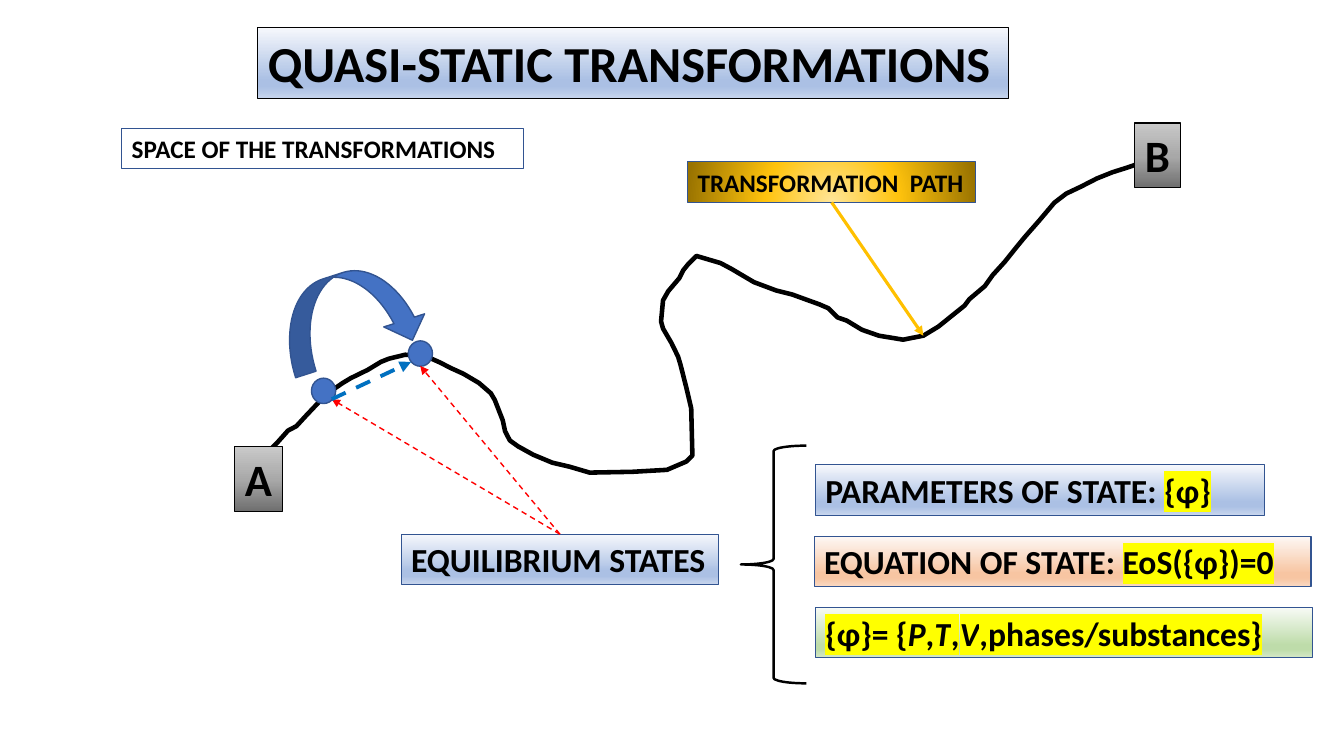
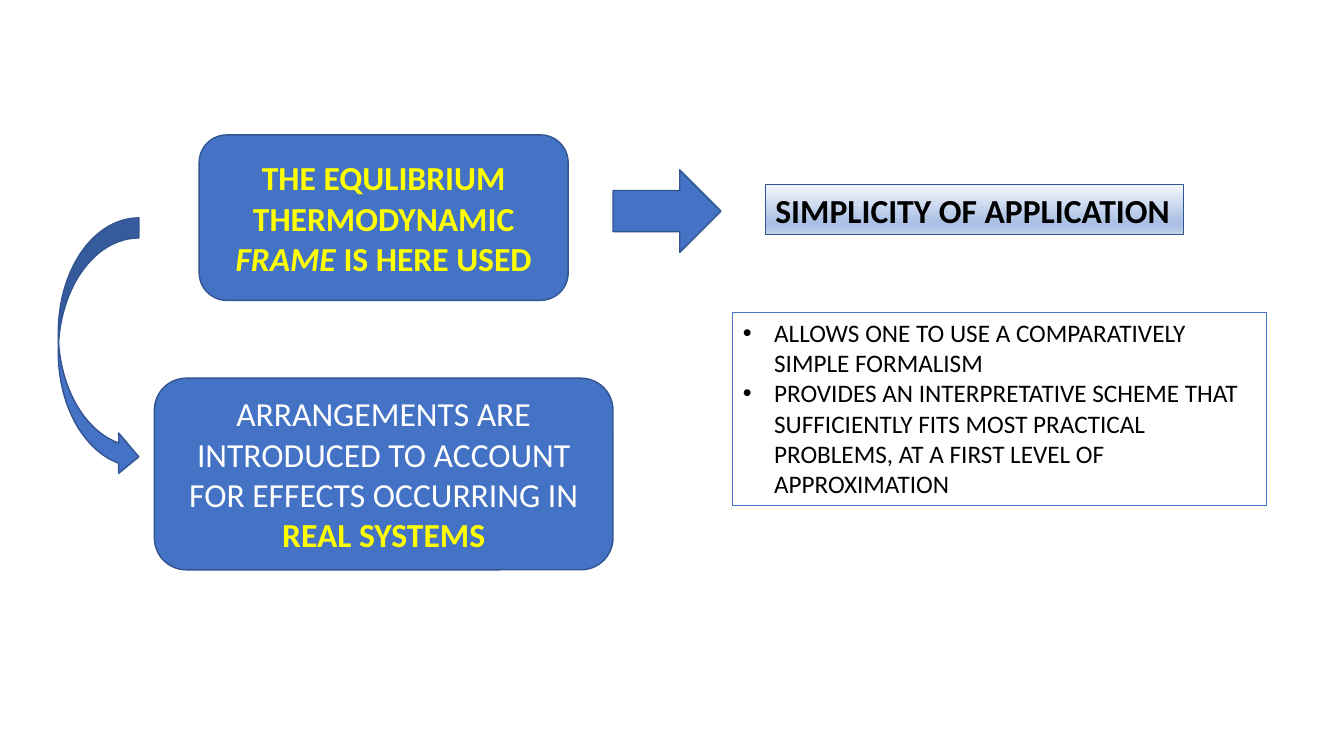
from dataclasses import dataclass
from typing import Optional

import lxml.etree
import pptx
import pptx.dml.color
import pptx.enum.dml
import pptx.enum.shapes
import pptx.enum.text
import pptx.oxml.ns
import pptx.util

Cm = pptx.util.Cm
SHAPES = pptx.enum.shapes.MSO_SHAPE
FONT = "Calibri"
BLACK, WHITE, YELLOW, RED = "000000", "FFFFFF", "FFFF00", "FF0000"
BLUE, DARK_BLUE, BRIGHT_BLUE, GOLD = "4472C4", "325491", "0070C0", "FFC000"


@dataclass(frozen=True)
class Gradient:
    stops: tuple[tuple[int, str], ...]
    angle: Optional[int] = 90


@dataclass(frozen=True)
class Piece:
    text: str
    color: str = BLACK
    bold: bool = True
    italic: bool = False
    highlight: Optional[str] = None


@dataclass(frozen=True)
class Box:
    left: float
    top: float
    width: float
    height: float


@dataclass(frozen=True)
class Label:
    box: Box
    paragraphs: tuple[tuple[Piece, ...], ...]
    size: int = 24
    fill: Optional[Gradient] = None
    line: str = DARK_BLUE
    wrap: bool = False
    bulleted: bool = False


@dataclass(frozen=True)
class Arrow:
    start: tuple[float, float]
    end: tuple[float, float]
    color: str
    width: float
    dashed: bool = False


def soft_gradient(light: str, middle: str, last: str) -> Gradient:
    return Gradient(((0, light), (74, middle), (83, middle), (100, last)))


BLUE_FADE = soft_gradient("F6F8FC", "ABC0E4", "C7D5ED")
ORANGE_FADE = soft_gradient("FEF8F5", "F7C5A2", "FAD8C1")
GREEN_FADE = soft_gradient("F8FBF6", "BEDCAA", "D4E8C6")
GRAY_FADE = Gradient(((0, "6F6F6F"), (48, "A8A8A8"), (100, "C9C9C9")), 270)
GOLD_GLOW = Gradient(((0, "FFE699"), (46, "FFC30D"), (100, "997300")), None)

PATH_POINTS = (
    (663, 1168), (681, 1133), (701, 1113), (726, 1085), (747, 1074), (770, 1049),
    (823, 993), (864, 965), (884, 953), (927, 932), (960, 912), (980, 904),
    (1021, 894), (1072, 897), (1110, 914), (1135, 927), (1168, 942), (1207, 965),
    (1237, 991), (1247, 1008), (1267, 1059), (1273, 1087), (1285, 1110), (1306, 1125),
    (1344, 1146), (1392, 1166), (1435, 1176), (1486, 1191), (1593, 1189), (1681, 1184),
    (1730, 1163), (1745, 1148), (1742, 1029), (1730, 978), (1715, 919), (1709, 899),
    (1692, 864), (1671, 828), (1666, 810), (1671, 757), (1684, 734), (1712, 701),
    (1722, 681), (1735, 665), (1755, 645), (1816, 663), (1844, 678), (1900, 711),
    (1956, 732), (1996, 742), (2029, 754), (2065, 767), (2088, 777), (2111, 800),
    (2134, 808), (2172, 831), (2215, 846), (2276, 856), (2327, 846), (2365, 823),
    (2431, 770), (2443, 754), (2482, 721), (2502, 693), (2532, 660), (2560, 625),
    (2583, 597), (2619, 556), (2657, 511), (2687, 488), (2725, 470), (2764, 450),
    (2804, 434), (2842, 422), (2888, 406),
)


def rgb(color: str) -> pptx.dml.color.RGBColor:
    return pptx.dml.color.RGBColor.from_string(color)


def add_element(parent, tag: str, **attributes: str):
    return lxml.etree.SubElement(parent, pptx.oxml.ns.qn(tag), attributes)


def set_line(line, color: str, width: float) -> None:
    line.color.rgb = rgb(color)
    line.width = pptx.util.Pt(width)


def set_gradient(shape, gradient: Gradient) -> None:
    shape.fill.gradient()
    element = shape._element.spPr.find(pptx.oxml.ns.qn("a:gradFill"))
    for child in list(element):
        element.remove(child)
    stops = add_element(element, "a:gsLst")
    for position, color in gradient.stops:
        stop = add_element(stops, "a:gs", pos=str(position * 1000))
        add_element(stop, "a:srgbClr", val=color)
    if gradient.angle is None:
        circle = add_element(element, "a:path", path="circle")
        add_element(circle, "a:fillToRect", l="50000", t="130000", r="50000", b="-30000")
    else:
        add_element(element, "a:lin", ang=str(gradient.angle * 60000), scaled="0")


def write_pieces(paragraph, pieces: tuple[Piece, ...], size: int) -> None:
    for piece in pieces:
        run = paragraph.add_run()
        run.text = piece.text
        font = run.font
        font.name, font.size = FONT, pptx.util.Pt(size)
        font.bold, font.italic = piece.bold, piece.italic
        font.color.rgb = rgb(piece.color)
        if piece.highlight:
            properties = run._r.get_or_add_rPr()
            highlight = add_element(properties, "a:highlight")
            add_element(highlight, "a:srgbClr", val=piece.highlight)
            properties.find(pptx.oxml.ns.qn("a:solidFill")).addnext(highlight)


def add_bullet(paragraph) -> None:
    properties = paragraph._p.get_or_add_pPr()
    indent = Cm(0.79)
    properties.set("marL", str(indent))
    properties.set("indent", str(-indent))
    add_element(properties, "a:buFont", typeface="Arial")
    add_element(properties, "a:buChar", char="•")


def place(box: Box) -> tuple[int, int, int, int]:
    return Cm(box.left), Cm(box.top), Cm(box.width), Cm(box.height)


def draw_label(slide, label: Label):
    shape = slide.shapes.add_textbox(*place(label.box))
    set_line(shape.line, label.line, 0.75)
    if label.fill:
        set_gradient(shape, label.fill)
    frame = shape.text_frame
    frame.word_wrap = label.wrap
    frame.auto_size = pptx.enum.text.MSO_AUTO_SIZE.SHAPE_TO_FIT_TEXT
    for index, pieces in enumerate(label.paragraphs):
        paragraph = frame.add_paragraph() if index else frame.paragraphs[0]
        if label.bulleted:
            add_bullet(paragraph)
        write_pieces(paragraph, pieces, label.size)
    return shape


def draw_shape(slide, kind, box: Box, rotation: float = 0):
    shape = slide.shapes.add_shape(kind, *place(box))
    shape.shadow.inherit = False
    shape.rotation = rotation
    shape.fill.solid()
    shape.fill.fore_color.rgb = rgb(BLUE)
    set_line(shape.line, DARK_BLUE, 1)
    return shape


def draw_card(slide, box: Box, pieces: tuple[Piece, ...]) -> None:
    frame = draw_shape(slide, SHAPES.ROUNDED_RECTANGLE, box).text_frame
    frame.word_wrap = True
    frame.vertical_anchor = pptx.enum.text.MSO_ANCHOR.MIDDLE
    paragraph = frame.paragraphs[0]
    paragraph.alignment = pptx.enum.text.PP_ALIGN.CENTER
    write_pieces(paragraph, pieces, 24)


def draw_arrow(slide, arrow: Arrow):
    connector = slide.shapes.add_connector(
        pptx.enum.shapes.MSO_CONNECTOR.STRAIGHT,
        *(Cm(value) for value in arrow.start + arrow.end),
    )
    set_line(connector.line, arrow.color, arrow.width)
    if arrow.dashed:
        connector.line.dash_style = pptx.enum.dml.MSO_LINE.DASH
    add_element(connector.line._get_or_add_ln(), "a:tailEnd", type="triangle")
    add_element(connector._element.spPr, "a:effectLst")
    return connector


def draw_transformation_path(slide) -> None:
    builder = slide.shapes.build_freeform(*PATH_POINTS[0], scale=Cm(0.01))
    builder.add_line_segments(PATH_POINTS[1:], close=False)
    shape = builder.convert_to_shape()
    shape.shadow.inherit = False
    shape.fill.background()
    set_line(shape.line, BLACK, 3.25)


def build_transformations(slide) -> None:
    draw_label(slide, Label(Box(6.5, 0.69, 18.92, 1.8),
                            ((Piece("QUASI-STATIC TRANSFORMATIONS"),),), 36, BLUE_FADE, BLACK))
    draw_transformation_path(slide)
    for letter, box in (("A", Box(5.92, 11.25, 1.19, 1.63)), ("B", Box(28.6, 3.1, 1.14, 1.63))):
        draw_label(slide, Label(box, ((Piece(letter),),), 32, GRAY_FADE, BLACK))
    for left, top in ((7.85, 9.53), (10.29, 8.59)):
        draw_shape(slide, SHAPES.OVAL, Box(left, top, 0.61, 0.64))
    draw_shape(slide, SHAPES.CURVED_LEFT_ARROW, Box(7.77, 6.12, 2.16, 3.63), 252.2)

    equilibrium = draw_label(slide, Label(Box(10.11, 13.46, 8, 1.27),
                                          ((Piece("EQUILIBRIUM STATES"),),), fill=BLUE_FADE))
    first_state = (8.36, 10.06)
    for state in (first_state, (10.59, 9.22)):
        pointer = draw_arrow(slide, Arrow((14.11, 13.46), state, RED, 1, True))
        pointer.begin_connect(equilibrium, 0)

    state_rows = (
        (20.55, 11.33, BLUE_FADE,
         (Piece("PARAMETERS OF STATE: "), Piece("{φ}", highlight=YELLOW))),
        (20.52, 12.52, ORANGE_FADE,
         (Piece("EQUATION OF STATE: "), Piece("EoS({φ})=0", highlight=YELLOW))),
        (20.55, 12.52, GREEN_FADE,
         tuple(Piece(text, italic=text in "PTV", highlight=YELLOW)
               for text in ("{φ}= {", "P", ",", "T", ",", "V", ",phases/substances}"))),
    )
    for row, (left, width, fill, pieces) in enumerate(state_rows):
        draw_label(slide, Label(Box(left, 11.71 + 1.8 * row, width, 1.27),
                                (pieces,), fill=fill, wrap=True))
    brace = draw_shape(slide, SHAPES.LEFT_BRACE, Box(18.67, 11.23, 1.65, 5.99))
    brace.fill.background()
    set_line(brace.line, BLACK, 1.75)

    draw_arrow(slide, Arrow(first_state, (10.36, 9.12), BRIGHT_BLUE, 2.75, True))
    draw_label(slide, Label(Box(3.07, 3.23, 10.13, 1.02),
                            ((Piece("SPACE OF THE TRANSFORMATIONS"),),), 18, wrap=True))
    path_label = draw_label(slide, Label(Box(17.33, 4.08, 7.26, 1.02),
                                         ((Piece("TRANSFORMATION  PATH"),),), 18, GOLD_GLOW))
    pointer = draw_arrow(slide, Arrow((20.96, 5.1), (23.27, 8.46), GOLD, 2.25))
    pointer.begin_connect(path_label, 2)


def build_application(slide) -> None:
    draw_card(slide, Box(5.02, 3.4, 9.3, 4.17), (
        Piece("THE EQULIBRIUM THERMODYNAMIC ", YELLOW),
        Piece("FRAME", YELLOW, italic=True),
        Piece(" IS HERE USED", YELLOW),
    ))
    draw_card(slide, Box(3.89, 9.53, 11.56, 4.83), (
        Piece("ARRANGEMENTS ARE INTRODUCED TO ACCOUNT FOR EFFECTS OCCURRING IN ", WHITE, False),
        Piece("REAL SYSTEMS", YELLOW),
    ))
    draw_shape(slide, SHAPES.RIGHT_ARROW, Box(15.45, 4.28, 2.72, 2.08))
    draw_label(slide, Label(Box(19.29, 4.65, 10.54, 1.27),
                            ((Piece("SIMPLICITY OF APPLICATION"),),), fill=BLUE_FADE))
    advantages = (
        "ALLOWS ONE TO USE A COMPARATIVELY SIMPLE FORMALISM",
        "PROVIDES AN INTERPRETATIVE SCHEME THAT SUFFICIENTLY FITS MOST PRACTICAL PROBLEMS, "
        "AT A FIRST LEVEL OF APPROXIMATION",
    )
    draw_label(slide, Label(Box(18.47, 7.87, 13.46, 4.88),
                            tuple((Piece(text, bold=False),) for text in advantages),
                            18, line=BLUE, wrap=True, bulleted=True))
    draw_shape(slide, SHAPES.CURVED_RIGHT_ARROW, Box(1.47, 5.49, 2.03, 6.53))


def main() -> None:
    presentation = pptx.Presentation()
    presentation.slide_width, presentation.slide_height = Cm(33.87), Cm(19.05)
    for build in (build_transformations, build_application):
        build(presentation.slides.add_slide(presentation.slide_layouts[6]))
    presentation.save("out.pptx")


if __name__ == "__main__":
    main()
